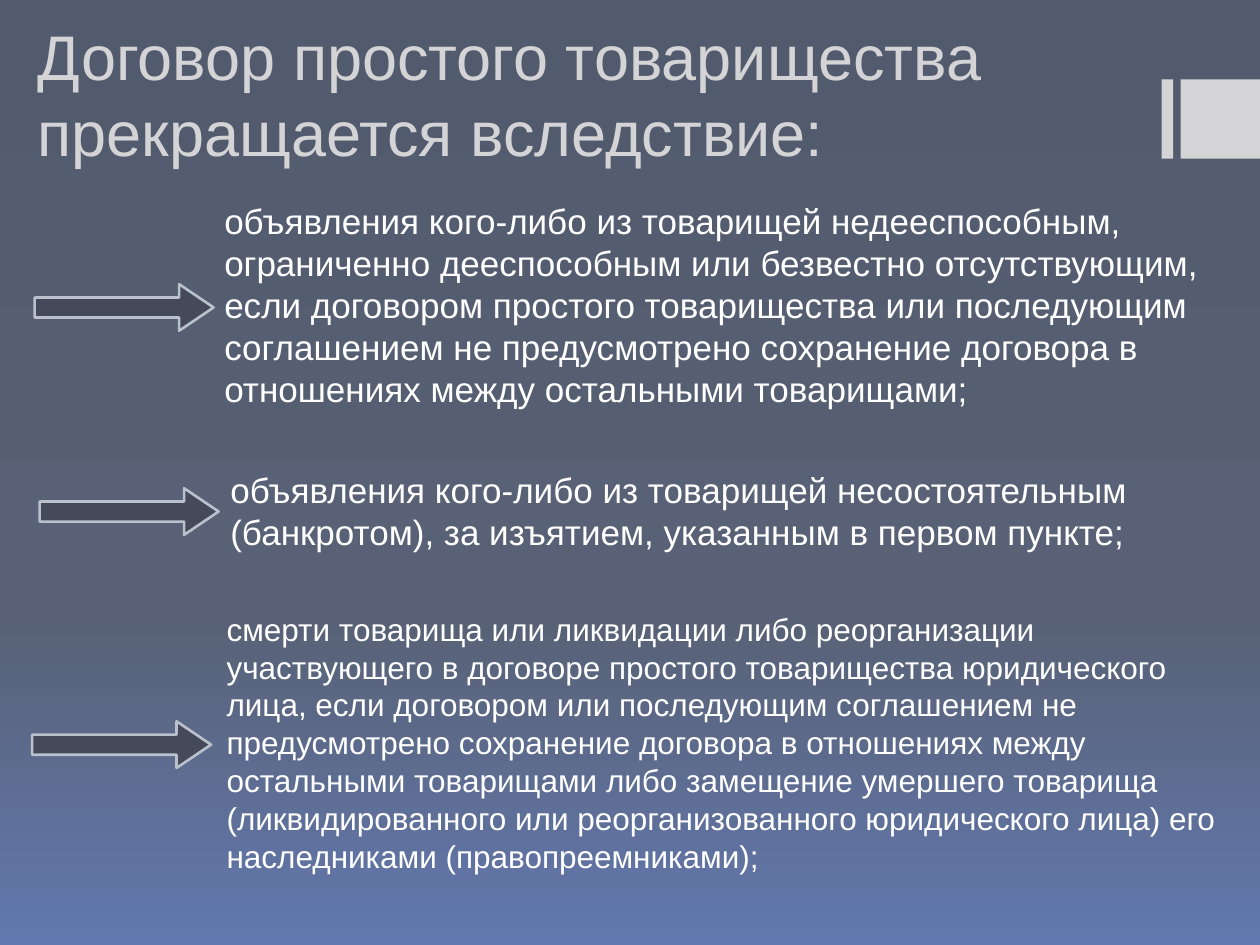
from copy import deepcopy

from lxml.etree import SubElement
from pptx import Presentation
from pptx.dml.color import RGBColor
from pptx.enum.shapes import MSO_SHAPE
from pptx.enum.text import MSO_ANCHOR, MSO_AUTO_SIZE, PP_ALIGN
from pptx.oxml.ns import qn
from pptx.util import Inches, Pt

COLORS = {
    "sky": "525A6D",
    "haze": "586175",
    "horizon": "6278AE",
    "title": "D4D4D6",
    "text": "FFFFFF",
    "arrow": "444A5A",
    "arrow_edge": "BAC0CC",
}
FONT = "Arial"
TITLE = "Договор простого товарищества прекращается вследствие:"
INCAPACITY = (
    "объявления кого-либо из товарищей недееспособным, ограниченно "
    "дееспособным или безвестно отсутствующим, если договором простого "
    "товарищества или последующим соглашением не предусмотрено сохранение "
    "договора в отношениях между остальными товарищами;"
)
BANKRUPTCY = (
    "объявления кого-либо из товарищей несостоятельным (банкротом), "
    "за изъятием, указанным в первом пункте;"
)
DEATH = (
    "смерти товарища или ликвидации либо реорганизации участвующего в "
    "договоре простого товарищества юридического лица, если договором или "
    "последующим соглашением не предусмотрено сохранение договора в "
    "отношениях между остальными товарищами либо замещение умершего товарища "
    "(ликвидированного или реорганизованного юридического лица) его "
    "наследниками (правопреемниками);"
)
ARROW_SIZE = (0.37, 1.42)
ARROW_POSITIONS = [(0.8, 1.73), (0.84, 3.35), (0.78, 5.2)]
ACCENT_TOP = 0.63
ACCENT_HEIGHT = 0.63


def color(name):
    return RGBColor.from_string(COLORS[name])


def paint_background(slide):
    fill = slide.background.fill
    fill.gradient()
    fill.gradient_angle = 270
    first = fill.gradient_stops[0]._gs
    first.addnext(deepcopy(first))
    stops = [("sky", 0), ("haze", 0.65), ("horizon", 1)]
    for stop, (name, position) in zip(fill.gradient_stops, stops):
        stop.color.rgb = color(name)
        stop.position = position


def add_accent(slide, left, width):
    accent = slide.shapes.add_shape(
        MSO_SHAPE.RECTANGLE, Inches(left), Inches(ACCENT_TOP),
        Inches(width), Inches(ACCENT_HEIGHT))
    accent.shadow.inherit = False
    accent.fill.solid()
    accent.fill.fore_color.rgb = color("title")
    accent.line.fill.background()


def write_text(holder, text, size, color_name):
    frame = holder.text_frame
    frame.word_wrap = True
    paragraph = frame.paragraphs[0]
    paragraph.alignment = PP_ALIGN.LEFT
    run = paragraph.add_run()
    run.text = text
    run.font.size = Pt(size)
    run.font.name = FONT
    run.font.color.rgb = color(color_name)
    return paragraph


def place(holder, left, top, width, height):
    holder.left, holder.top = Inches(left), Inches(top)
    holder.width, holder.height = Inches(width), Inches(height)
    holder.text_frame.auto_size = MSO_AUTO_SIZE.NONE


def fill_title(slide):
    title = slide.shapes.title
    place(title, 0.2, 0.13, 8, 1.26)
    title.text_frame.vertical_anchor = MSO_ANCHOR.BOTTOM
    write_text(title, TITLE, 36, "title")


def fill_body(slide):
    body = slide.placeholders[1]
    place(body, 1.63, 1.53, 8.35, 1.81)
    paragraph = write_text(body, INCAPACITY, 20, "text")
    properties = paragraph._p.get_or_add_pPr()
    properties.set("marL", str(Inches(0.05)))
    properties.set("indent", "0")
    SubElement(properties, qn("a:buNone"))


def add_ground(slide, text, size, left, top, width, height):
    ground = slide.shapes.add_textbox(
        Inches(left), Inches(top), Inches(width), Inches(height))
    ground.text_frame.auto_size = MSO_AUTO_SIZE.SHAPE_TO_FIT_TEXT
    write_text(ground, text, size, "text")


def add_arrow(slide, left, top):
    width, height = ARROW_SIZE
    arrow = slide.shapes.add_shape(
        MSO_SHAPE.DOWN_ARROW, Inches(left), Inches(top),
        Inches(width), Inches(height))
    arrow.rotation = 270
    arrow.adjustments[0] = 0.43
    arrow.adjustments[1] = 0.74
    arrow.shadow.inherit = False
    arrow.fill.solid()
    arrow.fill.fore_color.rgb = color("arrow")
    arrow.line.color.rgb = color("arrow_edge")
    arrow.line.width = Pt(1.5)


def main():
    presentation = Presentation()
    presentation.slide_width = Inches(10)
    presentation.slide_height = Inches(7.5)
    slide = presentation.slides.add_slide(presentation.slide_layouts[1])
    paint_background(slide)
    add_accent(slide, 9.22, 0.09)
    add_accent(slide, 9.37, 0.63)
    fill_title(slide)
    fill_body(slide)
    add_ground(slide, BANKRUPTCY, 20, 1.73, 3.67, 8.27, 0.77)
    add_ground(slide, DEATH, 18, 1.7, 4.79, 8.27, 2.22)
    for left, top in ARROW_POSITIONS:
        add_arrow(slide, left, top)
    presentation.save("out.pptx")


if __name__ == "__main__":
    main()
